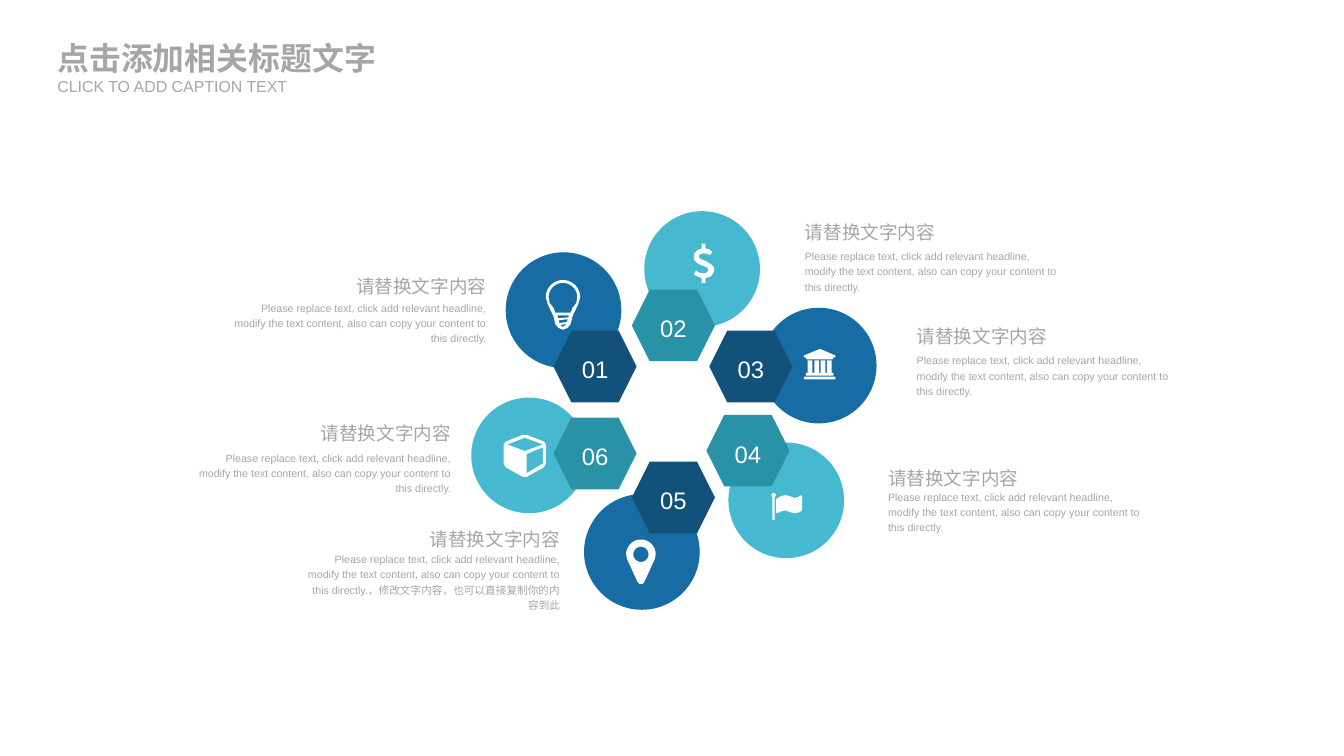
from math import cos, radians, sin

from pptx import Presentation
from pptx.dml.color import RGBColor
from pptx.enum.shapes import MSO_SHAPE
from pptx.enum.text import MSO_ANCHOR, MSO_AUTO_SIZE, PP_ALIGN
from pptx.util import Inches, Pt

OVAL, HEXAGON = MSO_SHAPE.OVAL, MSO_SHAPE.HEXAGON
LEFT, CENTER, RIGHT = PP_ALIGN.LEFT, PP_ALIGN.CENTER, PP_ALIGN.RIGHT
MIDDLE, GROW = MSO_ANCHOR.MIDDLE, MSO_AUTO_SIZE.SHAPE_TO_FIT_TEXT
WHITE, GREY = RGBColor(0xFF, 0xFF, 0xFF), RGBColor(0xA6, 0xA6, 0xA6)
BLUE, NAVY = RGBColor(0x16, 0x6C, 0xA3), RGBColor(0x11, 0x51, 0x7A)
AQUA, TEAL = RGBColor(0x46, 0xB9, 0xD0), RGBColor(0x2A, 0x92, 0xA6)
FONT = "Arial"


def arc(x, y, r, start=0, end=360):
    angles = [radians(start + (end - start) * i / 24) for i in range(25)]
    return [(x + r * cos(a), y + r * sin(a)) for a in angles]


def box(left, top, right, low):
    return [(left, top), (right, top), (right, low), (left, low)]


# Content
TITLE = "点击添加相关标题文字"
CAPTION = "CLICK TO ADD CAPTION TEXT"
HEAD = "请替换文字内容"
BODY = ("Please replace text, click add relevant headline, modify the text "
        "content, also can copy your content to this directly.")
MORE = "，修改文字内容，也可以直接复制你的内容到此"

# Number, circle corner, hexagon corner, colours
BLUES, AQUAS = (BLUE, NAVY), (AQUA, TEAL)
STEPS = [
    ("01", (5.29, 2.64), (5.79, 3.46), BLUES),
    ("02", (6.74, 2.21), (6.61, 3.03), AQUAS),
    ("03", (7.96, 3.22), (7.42, 3.46), BLUES),
    ("04", (7.62, 4.63), (7.39, 4.34), AQUAS),
    ("05", (6.11, 5.17), (6.61, 4.83), BLUES),
    ("06", (4.93, 4.16), (5.79, 4.37), AQUAS),
]
# Text edge, heading top, body top, alignment, body
NOTES = [
    (5.09, 2.83, 3.13, RIGHT, BODY),
    (8.42, 2.26, 2.59, LEFT, BODY),
    (9.59, 3.35, 3.68, LEFT, BODY),
    (9.29, 4.84, 5.11, LEFT, BODY),
    (5.86, 5.48, 5.76, RIGHT, BODY + MORE),
    (4.72, 4.37, 4.7, RIGHT, BODY),
]

# Icon outlines, in hundredths of an inch from each corner
BULB = [
    arc(18, 18, 18, 180, 360) + [
        (34, 25), (28, 38), (26, 46), (23, 50), (18, 52), (13, 50), (10, 46),
        (8, 38), (2, 25)],
    arc(18, 18, 15, 180, 360) + [
        (32, 24), (28, 29), (26, 34), (10, 34), (8, 29), (4, 24)],
    [(12, 37), (24, 37), (24, 39), (13, 40)],
    [(14, 42), (23, 41), (22, 44), (14, 45)],
    [(15, 47), (22, 46), (18, 49)],
]
DOLLAR = [[
    (13, 36), (13, 41), (9, 41), (9, 36), (5, 34.5), (1, 32), (3, 28),
    (7, 30.5), (11, 31), (15, 30), (16, 27), (15, 25), (10, 23), (4, 20),
    (1, 17), (1, 11), (4, 7), (9, 5), (9, 0), (13, 0), (13, 5), (17, 6),
    (20, 8.5), (18, 12), (15, 10.5), (11, 10), (7, 11), (6, 14), (8, 16),
    (13, 18), (19, 21.5), (22, 25), (22, 29), (19, 34)]]
BANK = [
    [(0, 7), (17, 0), (33, 7), (33, 9), (31, 9), (30, 11), (3, 11), (2, 9),
     (0, 9)],
    *[box(x, 12, x + 5, 25) for x in (4, 11, 17.5, 24)],
    box(2, 25, 31, 28),
    [(0, 32), (0, 30), (1, 29), (32, 29), (33, 30), (33, 32)],
]
FLAG = [
    arc(2.3, 2, 2.3),
    box(1, 4, 3.3, 28),
    [(5, 6), (10, 3), (15, 2), (19, 3), (24, 5), (28, 4), (31, 2), (32, 4),
     (32, 18), (29, 20), (24, 21), (20, 20), (15, 18), (10, 19), (6, 21),
     (5, 20)],
]
PIN = [
    arc(15.5, 16, 15.5, 180, 360) + [
        (30, 21), (19, 45), (17, 47), (14, 47), (12, 45), (1, 21)],
    arc(15.5, 16, 8),
]
CUBE = [
    [(0, 10), (2, 7), (20, 0), (24, 0), (42, 7), (44, 10), (44, 30), (42, 34),
     (24, 44), (20, 44), (2, 34), (0, 30)],
    [(41, 10), (22, 3), (4, 10), (22, 17)],
    [(41, 30), (41, 13), (24, 20), (24, 40)],
]
ICONS = [
    (5.71, 2.93, BULB), (7.25, 2.55, DOLLAR), (8.41, 3.65, BANK),
    (8.07, 5.16, FLAG), (6.55, 5.64, PIN), (5.27, 4.55, CUBE),
]

deck = Presentation()
deck.slide_width, deck.slide_height = Inches(14.06), Inches(7.91)
slide = deck.slides.add_slide(deck.slide_layouts[6])


def paint(shape, color):
    shape.shadow.inherit = False
    shape.fill.solid()
    shape.fill.fore_color.rgb = color
    shape.line.fill.background()


def write(shape, text, size, color, align, bold=False, space=1.2):
    shape.text_frame.text = text
    para = shape.text_frame.paragraphs[0]
    para.alignment, para.line_spacing = align, space
    font = para.runs[0].font
    font.name, font.size, font.bold = FONT, Pt(size), bold
    font.color.rgb = color


def preset(kind, spot, width, height, color):
    shape = slide.shapes.add_shape(
        kind, *map(Inches, (*spot, width, height)))
    paint(shape, color)
    return shape


def label(home, area, text, size, align=LEFT, wrap=True, **style):
    shape = home.add_textbox(*map(Inches, area))
    frame = shape.text_frame
    frame.margin_left = frame.margin_right = 0
    frame.margin_top = frame.margin_bottom = 0
    frame.word_wrap, frame.auto_size = wrap, GROW
    write(shape, text, size, GREY, align, **style)


def draw(left, top, paths):
    first, *rest = [[(Inches(x / 100), Inches(y / 100)) for x, y in path]
                    for path in paths]
    pen = slide.shapes.build_freeform(*first[0])
    pen.add_line_segments(first[1:])
    for path in rest:
        pen.move_to(*path[0])
        pen.add_line_segments(path[1:])
    paint(pen.convert_to_shape(Inches(left), Inches(top)), WHITE)


# Circles, then the numbered hexagons over them
for _, spot, _, (color, _) in STEPS:
    preset(OVAL, spot, 1.21, 1.21, color)
for number, _, spot, (_, color) in STEPS:
    cell = preset(HEXAGON, spot, 0.87, 0.75, color)
    cell.text_frame.vertical_anchor = MIDDLE
    write(cell, number, 18, WHITE, CENTER)

# Icons
for icon in ICONS:
    draw(*icon)

# Headings and body text
for edge, high, low, align, text in NOTES:
    pair = slide.shapes.add_group_shape().shapes
    for top, width, height, words, size, wrap in (
            (low, 2.66, 0.47, text, 8, True),
            (high, 1.73, 0.28, HEAD, 14, False)):
        left = edge - width if align == RIGHT else edge
        label(pair, (left, top, width, height), words, size, align, wrap)

# Slide title
label(slide.shapes, (0.6, 0.4, 3.52, 0.4), TITLE, 24, bold=True, space=1)
label(slide.shapes, (0.6, 0.8, 2.89, 0.2), CAPTION, 12, space=1)

deck.save("out.pptx")
